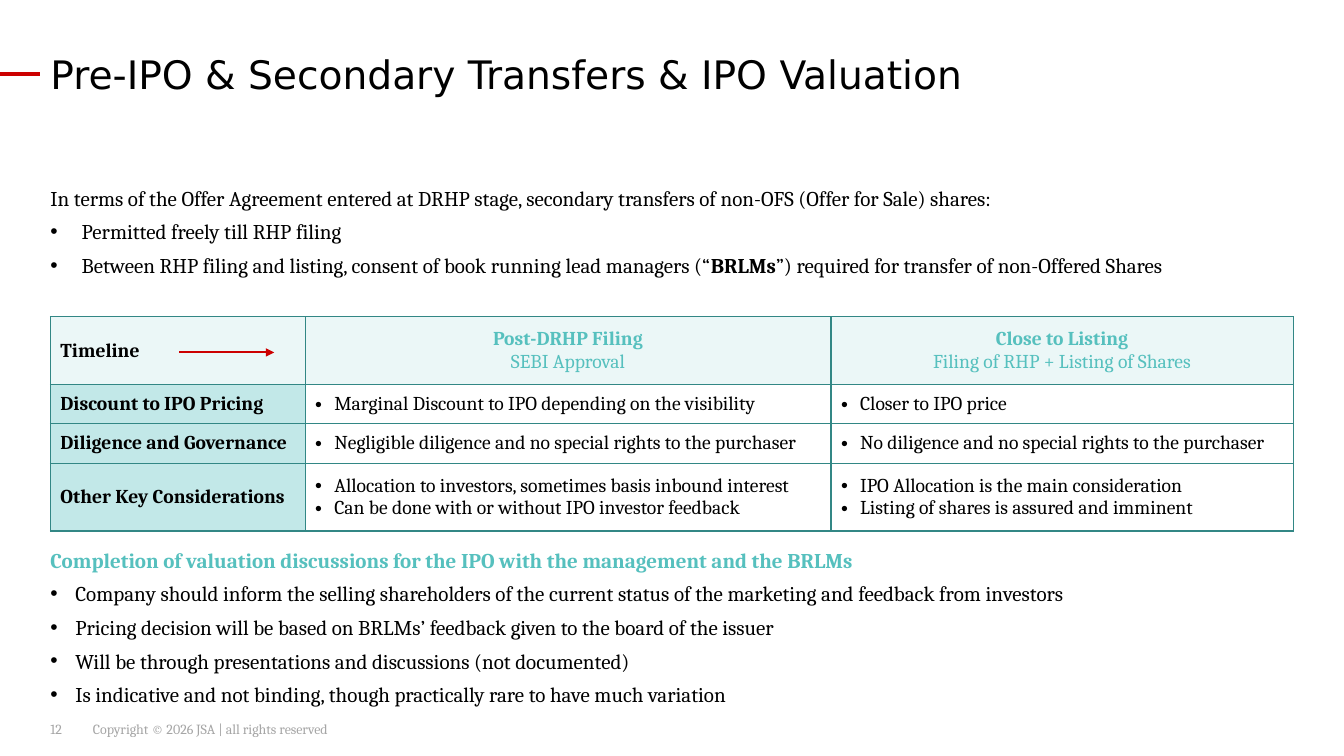
from lxml import etree
from pptx import Presentation
from pptx.dml.color import RGBColor
from pptx.enum.shapes import MSO_CONNECTOR
from pptx.enum.text import MSO_ANCHOR, MSO_AUTO_SIZE, PP_ALIGN
from pptx.oxml.ns import qn
from pptx.util import Cm, Pt

STRAIGHT = MSO_CONNECTOR.STRAIGHT
TOP, MIDDLE = MSO_ANCHOR.TOP, MSO_ANCHOR.MIDDLE
NO_AUTOFIT = MSO_AUTO_SIZE.NONE
LEFT, CENTER, JUSTIFY = PP_ALIGN.LEFT, PP_ALIGN.CENTER, PP_ALIGN.JUSTIFY

BODY_FONT, TITLE_FONT = "Cambria", "DejaVu Sans"
BLACK, GREY, RED = "000000", "A6A6A6", "CC0000"
TEAL, BORDER, HEADER_FILL, LABEL_FILL = "56C0BE", "328785", "EBF7F7", "C2E8E8"
MARGIN, CONTENT_WIDTH = 1.27, 31.32

INTRO = "In terms of the Offer Agreement entered at DRHP stage, secondary transfers of non-OFS (Offer for Sale) shares:"
INTRO_BULLETS = [
    [("Permitted freely till RHP filing", False)],
    [("Between RHP filing and listing, consent of book running lead managers (“", False),
     ("BRLMs", True),
     ("”) required for transfer of non-Offered Shares", False)],
]
HEADERS = [
    ("Post-DRHP Filing", "SEBI Approval"),
    ("Close to Listing", "Filing of RHP + Listing of Shares"),
]
TABLE_ROWS = [
    ("Discount to IPO Pricing",
     ["Marginal Discount to IPO depending on the visibility"],
     ["Closer to IPO price"]),
    ("Diligence and Governance",
     ["Negligible diligence and no special rights to the purchaser"],
     ["No diligence and no special rights to the purchaser"]),
    ("Other Key Considerations",
     ["Allocation to investors, sometimes basis inbound interest",
      "Can be done with or without IPO investor feedback"],
     ["IPO Allocation is the main consideration",
      "Listing of shares is assured and imminent"]),
]
VALUATION = "Completion of valuation discussions for the IPO with the management and the BRLMs"
VALUATION_BULLETS = [
    "Company should inform the selling shareholders of the current status of the marketing and feedback from investors",
    "Pricing decision will be based on BRLMs’ feedback given to the board of the issuer",
    "Will be through presentations and discussions (not documented)",
    "Is indicative and not binding, though practically rare to have much variation",
]


def color(value):
    return RGBColor.from_string(value)


def line_of(runs, indent=0, **formats):
    """Describe one paragraph: its (text, bold) runs, bullet indent in cm and formats."""
    runs = [(runs, False)] if isinstance(runs, str) else runs
    return {"runs": runs, "indent": indent, **formats}


def write_paragraph(paragraph, runs, indent, size, fill=BLACK, font=BODY_FONT,
                    align=LEFT, after=0):
    properties = paragraph._p.get_or_add_pPr()
    properties.set("marL", str(Cm(indent)))
    properties.set("indent", str(-Cm(indent)))
    if indent:
        etree.SubElement(properties, qn("a:buFont"), typeface="Arial")
        etree.SubElement(properties, qn("a:buChar"), char="•")
    else:
        etree.SubElement(properties, qn("a:buNone"))
    formats = {"alignment": align, "space_before": Pt(0), "space_after": Pt(after)}
    for name, value in formats.items():
        setattr(paragraph, name, value)
    for text, bold in runs:
        run = paragraph.add_run()
        run.text = text
        for name, value in {"name": font, "size": Pt(size), "bold": bold}.items():
            setattr(run.font, name, value)
        run.font.color.rgb = color(fill)


def write_lines(frame, lines):
    for index, line in enumerate(lines):
        paragraph = frame.add_paragraph() if index else frame.paragraphs[0]
        write_paragraph(paragraph, **line)


def fill_text_shape(shape, box, lines, anchor=TOP):
    for name, value in zip(("left", "top", "width", "height"), box):
        setattr(shape, name, Cm(value))
    frame = shape.text_frame
    formats = {"margin_left": 0, "margin_right": 0, "margin_top": 0, "margin_bottom": 0,
               "word_wrap": True, "auto_size": NO_AUTOFIT, "vertical_anchor": anchor}
    for name, value in formats.items():
        setattr(frame, name, value)
    write_lines(frame, lines)


def add_text(slide, box, lines, anchor=TOP):
    shape = slide.shapes.add_textbox(*map(Cm, box))
    fill_text_shape(shape, box, lines, anchor)


def add_line(slide, start, end, y, width, arrow=False):
    connector = slide.shapes.add_connector(STRAIGHT, Cm(start), Cm(y), Cm(end), Cm(y))
    connector.line.color.rgb = color(RED)
    connector.line.width = Pt(width)
    if arrow:
        etree.SubElement(connector.line._get_or_add_ln(), qn("a:tailEnd"), type="triangle")
    etree.SubElement(connector._element.spPr, qn("a:effectLst"))


def format_cell(cell, lines, fill=None):
    cell.vertical_anchor = MIDDLE
    properties = cell._tc.get_or_add_tcPr()
    for side in ("lnL", "lnR", "lnT", "lnB"):
        border = etree.SubElement(properties, qn(f"a:{side}"), w=str(Pt(1)))
        solid = etree.SubElement(border, qn("a:solidFill"))
        etree.SubElement(solid, qn("a:srgbClr"), val=BORDER)
    if fill:
        cell.fill.solid()
        cell.fill.fore_color.rgb = color(fill)
    else:
        cell.fill.background()
    write_lines(cell.text_frame, lines)


def add_timeline_table(slide):
    widths, heights = (6.42, 13.25, 11.65), (1.71, 0.99, 0.99, 1.71)
    frame = slide.shapes.add_table(len(heights), len(widths), Cm(MARGIN), Cm(7.98),
                                   Cm(CONTENT_WIDTH), Cm(sum(heights)))
    table = frame.table
    for column, width in zip(table.columns, widths):
        column.width = Cm(width)
    for row, height in zip(table.rows, heights):
        row.height = Cm(height)

    format_cell(table.cell(0, 0), [line_of([("Timeline", True)], size=14)], HEADER_FILL)
    for column, (stage, detail) in enumerate(HEADERS, 1):
        lines = [line_of([(text, bold)], size=14, fill=TEAL, align=CENTER)
                 for text, bold in ((stage, True), (detail, False))]
        format_cell(table.cell(0, column), lines, HEADER_FILL)
    for row, (label, *points) in enumerate(TABLE_ROWS, 1):
        format_cell(table.cell(row, 0), [line_of([(label, True)], size=14)], LABEL_FILL)
        for column, texts in enumerate(points, 1):
            format_cell(table.cell(row, column),
                        [line_of(text, 0.48, size=14) for text in texts])


def main():
    presentation = Presentation()
    presentation.slide_width, presentation.slide_height = Cm(33.87), Cm(19.05)
    slide = presentation.slides.add_slide(presentation.slide_layouts[1])
    title, body = slide.placeholders

    add_text(slide, (2.34, 18.16, 14.81, 0.43),
             [line_of("Copyright © 2026 JSA | all rights reserved", size=10, fill=GREY)], MIDDLE)
    add_text(slide, (MARGIN, 18.16, 1.02, 0.43), [line_of("12", size=10, fill=GREY)], MIDDLE)
    add_line(slide, 0, 1.02, 1.86, 3)
    fill_text_shape(title, (MARGIN, 1.27, CONTENT_WIDTH, 1.19),
                    [line_of("Pre-IPO & Secondary Transfers & IPO Valuation",
                             size=28, font=TITLE_FONT)])
    fill_text_shape(body, (MARGIN, 4.67, CONTENT_WIDTH, 2.24),
                    [line_of(INTRO, size=15, after=6)]
                    + [line_of(runs, 0.79, size=15, after=6) for runs in INTRO_BULLETS])
    add_timeline_table(slide)
    add_text(slide, (MARGIN, 13.79, 28.4, 4.06),
             [line_of([(VALUATION, True)], size=15, fill=TEAL, align=JUSTIFY, after=6)]
             + [line_of(text, 0.63, size=15, align=JUSTIFY, after=6)
                for text in VALUATION_BULLETS])
    add_line(slide, 4.52, 6.91, 8.88, 1.5, arrow=True)
    presentation.save("out.pptx")


if __name__ == "__main__":
    main()
